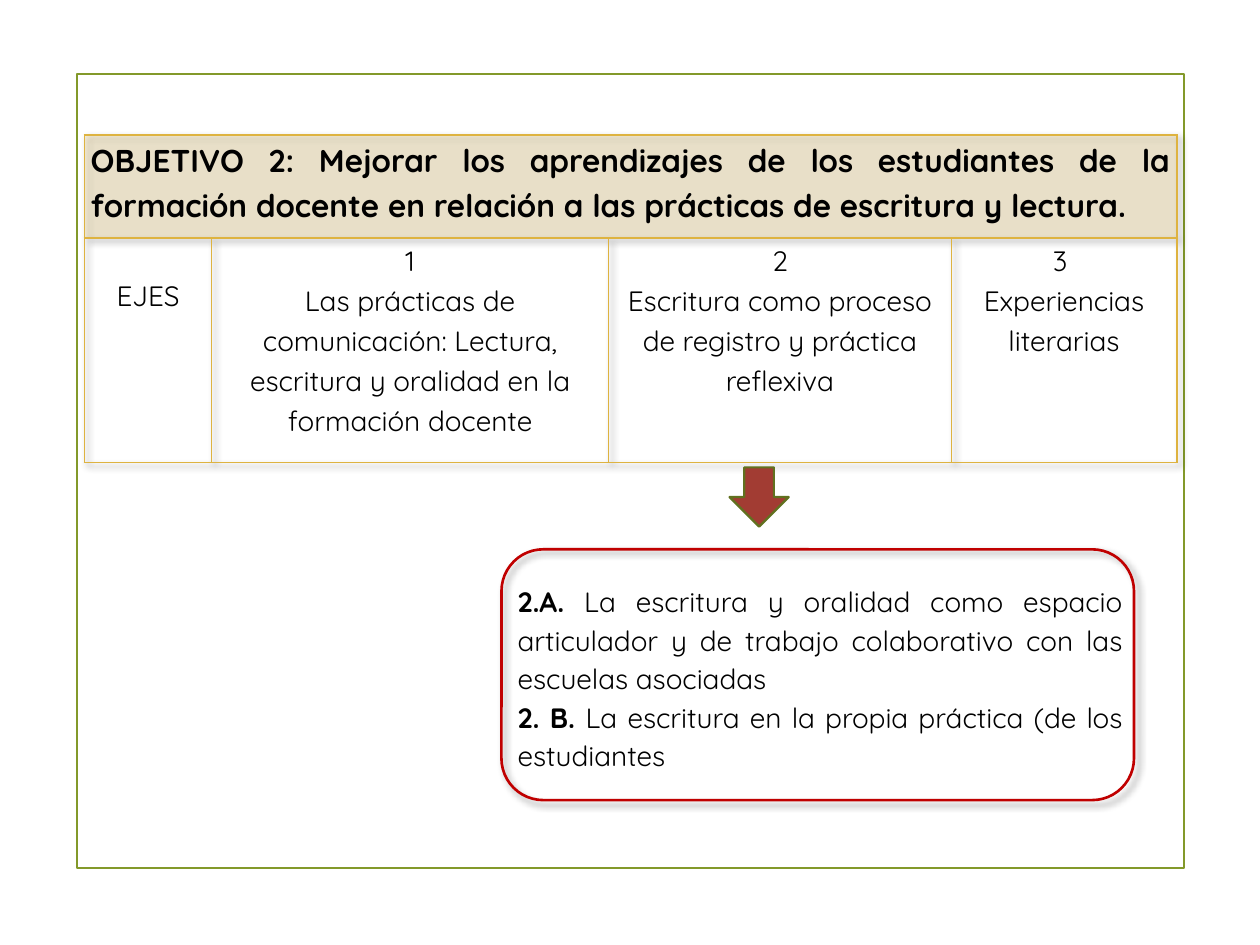
from lxml import etree
from pptx import Presentation
from pptx.dml.color import RGBColor
from pptx.enum.shapes import MSO_SHAPE as SHAPE
from pptx.enum.text import PP_ALIGN as ALIGN
from pptx.oxml import parse_xml
from pptx.oxml.ns import nsdecls, qn
from pptx.util import Inches, Pt

FONT = "Quicksand"
COLORS = {"frame": "83992A", "gold": "DEB340", "text": "000000", "card": "C00000",
          "arrow": "A23C33", "arrow_line": "61711F", "shadow": "000000"}
TITLE = ("OBJETIVO 2: Mejorar los aprendizajes de los estudiantes de la formación "
         "docente en relación a las prácticas de escritura y lectura.")
AXES = [
    ["EJES"],
    ["1", "Las prácticas de comunicación: Lectura, escritura y oralidad en la formación docente"],
    ["2", "Escritura como proceso de registro y práctica reflexiva"],
    ["3 ", "Experiencias literarias"],
]
POINTS = [
    ("2.A.", " La escritura y oralidad como espacio articulador y de trabajo "
             "colaborativo con las escuelas asociadas "),
    ("2. B. ", "La escritura en la propia práctica (de los estudiantes"),
]


def rgb(name):
    """Return the named colour."""
    return RGBColor.from_string(COLORS[name])


def shadow_effect():
    """Return an effect list with one soft outer shadow."""
    return parse_xml(
        f'<a:effectLst {nsdecls("a")}><a:outerShdw blurRad="{Pt(4)}" dist="{Pt(3)}" '
        f'dir="2700000" algn="tl" rotWithShape="0"><a:srgbClr val="{COLORS["shadow"]}">'
        '<a:alpha val="40000"/></a:srgbClr></a:outerShdw></a:effectLst>')


def add_outline(s, kind, box, line, width, fill=None):
    """Add a preset shape with an outline and an optional fill."""
    sp = s.shapes.add_shape(kind, *map(Inches, box))
    sp.shadow.inherit = False
    sp.line.color.rgb = rgb(line)
    sp.line.width = Pt(width)
    if fill:
        sp.fill.solid()
        sp.fill.fore_color.rgb = rgb(fill)
    else:
        sp.fill.background()
    return sp


def write(tf, paragraphs, size, align, bold=False):
    """Write paragraphs, each a list of (text, bold) runs."""
    tf.word_wrap = True
    for i, runs in enumerate(paragraphs):
        p = tf.add_paragraph() if i else tf.paragraphs[0]
        p.alignment, p.line_spacing = align, 1.15
        p.font.name, p.font.size, p.font.bold = FONT, Pt(size), bold
        p.font.color.rgb = rgb("text")
        for text, strong in runs:
            r = p.add_run()
            r.text = text
            if strong != bold:
                r.font.bold = strong


def style_cell(cell):
    """Give a cell narrow margins, no fill and gold borders."""
    cell.margin_left = cell.margin_right = Inches(0.05)
    cell.margin_top = cell.margin_bottom = 0
    cell.fill.background()
    tc_pr = cell._tc.get_or_add_tcPr()
    for i, side in enumerate(("lnL", "lnR", "lnT", "lnB")):
        tc_pr.insert(i, parse_xml(
            f'<a:{side} {nsdecls("a")} w="{Pt(1)}"><a:solidFill>'
            f'<a:srgbClr val="{COLORS["gold"]}"/></a:solidFill></a:{side}>'))


def add_axes_table(s, x, y, widths, heights):
    """Add the objective heading with its row of axes."""
    frame = s.shapes.add_table(len(heights), len(widths), Inches(x), Inches(y),
                               Inches(sum(widths)), Inches(sum(heights)))
    table = frame.table
    table.first_row = table.horz_banding = False
    table._tbl.tblPr.insert(0, shadow_effect())
    for col, width in zip(table.columns, widths):
        col.width = Inches(width)
    for row, height in zip(table.rows, heights):
        row.height = Inches(height)
    for cell in table.iter_cells():
        style_cell(cell)

    head = table.cell(0, 0)
    head.merge(table.cell(0, len(widths) - 1))
    head.fill.solid()
    head.fill.fore_color.rgb = rgb("gold")
    clr = head._tc.tcPr.find(qn("a:solidFill")).find(qn("a:srgbClr"))
    etree.SubElement(clr, qn("a:alpha"), val="20000")
    write(head.text_frame, [[(TITLE, True)]], 18, ALIGN.JUSTIFY, bold=True)

    for i, lines in enumerate(AXES):
        write(table.cell(1, i).text_frame, [[(line, False)] for line in lines],
              16, ALIGN.CENTER)
    table.cell(1, 0).margin_top = Inches(0.28)


def add_points_card(s, x, y, w, h):
    """Add the rounded card with the points of the second axis."""
    card = add_outline(s, SHAPE.ROUNDED_RECTANGLE, (x, y, w, h), "card", 1.5)
    sp_pr = card._element.spPr
    sp_pr.replace(sp_pr.find(qn("a:effectLst")), shadow_effect())
    tb = s.shapes.add_textbox(Inches(x + 0.03), Inches(y + 0.19), Inches(w - 0.02), Inches(1.65))
    write(tb.text_frame, [[(label, True), (text, False)] for label, text in POINTS],
          16, ALIGN.JUSTIFY)


def main():
    """Build the slide and save it."""
    prs = Presentation()
    prs.slide_width, prs.slide_height = Inches(10), Inches(7.5)
    s = prs.slides.add_slide(prs.slide_layouts[6])
    add_outline(s, SHAPE.RECTANGLE, (0.61, 0.59, 8.79, 6.3), "frame", 1.25)
    add_axes_table(s, 0.67, 1.07, (1.01, 3.15, 2.72, 1.79), (0.82, 1.78))
    add_points_card(s, 3.98, 4.36, 5.02, 1.99)
    add_outline(s, SHAPE.DOWN_ARROW, (5.79, 3.71, 0.47, 0.47), "arrow_line", 1.25, "arrow")
    prs.save("out.pptx")


if __name__ == "__main__":
    main()
